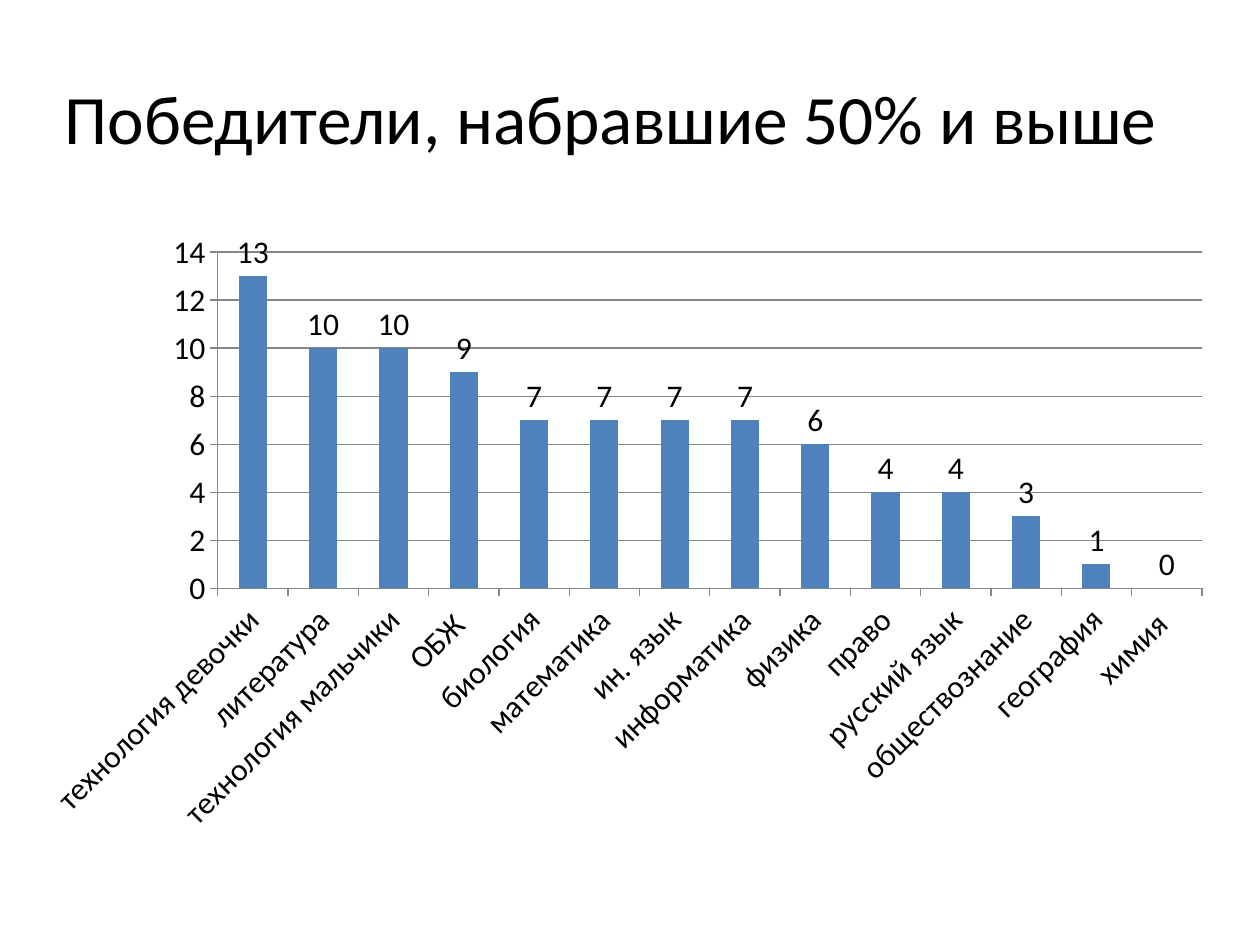
from pptx import Presentation
from pptx.chart.data import CategoryChartData
from pptx.dml.color import RGBColor
from pptx.enum.chart import XL_CHART_TYPE as ChartType
from pptx.enum.chart import XL_LABEL_POSITION as LabelPos
from pptx.enum.chart import XL_TICK_MARK as TickMark
from pptx.enum.text import MSO_ANCHOR, PP_ALIGN
from pptx.util import Inches, Pt

BLACK = RGBColor(0x00, 0x00, 0x00)
BLUE = RGBColor(0x4F, 0x81, 0xBD)
GRAY = RGBColor(0x86, 0x86, 0x86)
FONT = "Calibri"

TITLE = "Победители, набравшие 50% и выше"
WINNERS = {
    "технология девочки": 13,
    "литература": 10,
    "технология мальчики": 10,
    "ОБЖ ": 9,
    "биология": 7,
    "математика": 7,
    "ин. язык": 7,
    "информатика": 7,
    "физика": 6,
    "право": 4,
    "русский язык": 4,
    "обществознание": 3,
    "география": 1,
    "химия ": 0,
}


def format_font(font, size):
    for name, value in {"name": FONT, "size": Pt(size), "bold": False}.items():
        setattr(font, name, value)
    font.color.rgb = BLACK


def place_title(slide, left, top, width, height):
    sp = slide.shapes.title
    box = {"left": left, "top": top, "width": width, "height": height}
    for name, value in box.items():
        setattr(sp, name, Inches(value))
    tf = sp.text_frame
    tf.text = TITLE
    tf.word_wrap = True
    tf.vertical_anchor = MSO_ANCHOR.MIDDLE
    p = tf.paragraphs[0]
    p.alignment = PP_ALIGN.CENTER
    format_font(p.runs[0].font, 39.6)


def format_axes(chart):
    for axis in (chart.category_axis, chart.value_axis):
        axis.major_tick_mark = TickMark.OUTSIDE
        axis.minor_tick_mark = TickMark.NONE
        axis.format.line.color.rgb = GRAY
        axis.format.line.width = Pt(0.75)
        format_font(axis.tick_labels.font, 18)
    # Category names slant upwards at 45 degrees (60000 units per degree)
    body = chart.category_axis.tick_labels.font._element.getparent().getparent().getparent()
    body.find("{*}bodyPr").set("rot", str(-45 * 60000))

    values = chart.value_axis
    values.minimum_scale, values.maximum_scale, values.major_unit = 0, 14, 2
    values.has_major_gridlines = True
    grid = values.major_gridlines.format.line
    grid.color.rgb = GRAY
    grid.width = Pt(0.75)


def place_chart(slide, left, top, width, height):
    data = CategoryChartData()
    data.categories = list(WINNERS)
    data.add_series("Series 1", list(WINNERS.values()))
    box = [Inches(v) for v in (left, top, width, height)]
    chart = slide.shapes.add_chart(ChartType.COLUMN_CLUSTERED, *box, data).chart
    chart.has_title = False
    chart.has_legend = False
    format_font(chart.font, 18)
    format_axes(chart)

    plot = chart.plots[0]
    plot.gap_width = 150
    plot.vary_by_categories = False
    fill = plot.series[0].format.fill
    fill.solid()
    fill.fore_color.rgb = BLUE

    plot.has_data_labels = True
    labels = plot.data_labels
    labels.show_value = True
    labels.position = LabelPos.OUTSIDE_END
    format_font(labels.font, 18)


def main():
    prs = Presentation()
    prs.slide_width, prs.slide_height = Inches(10), Inches(7.5)
    slide = prs.slides.add_slide(prs.slide_layouts[5])
    place_title(slide, 0.2, 0.3, 9.3, 1.25)
    place_chart(slide, 0.2, 1.75, 9.53, 4.95)
    prs.save("out.pptx")


if __name__ == "__main__":
    main()
